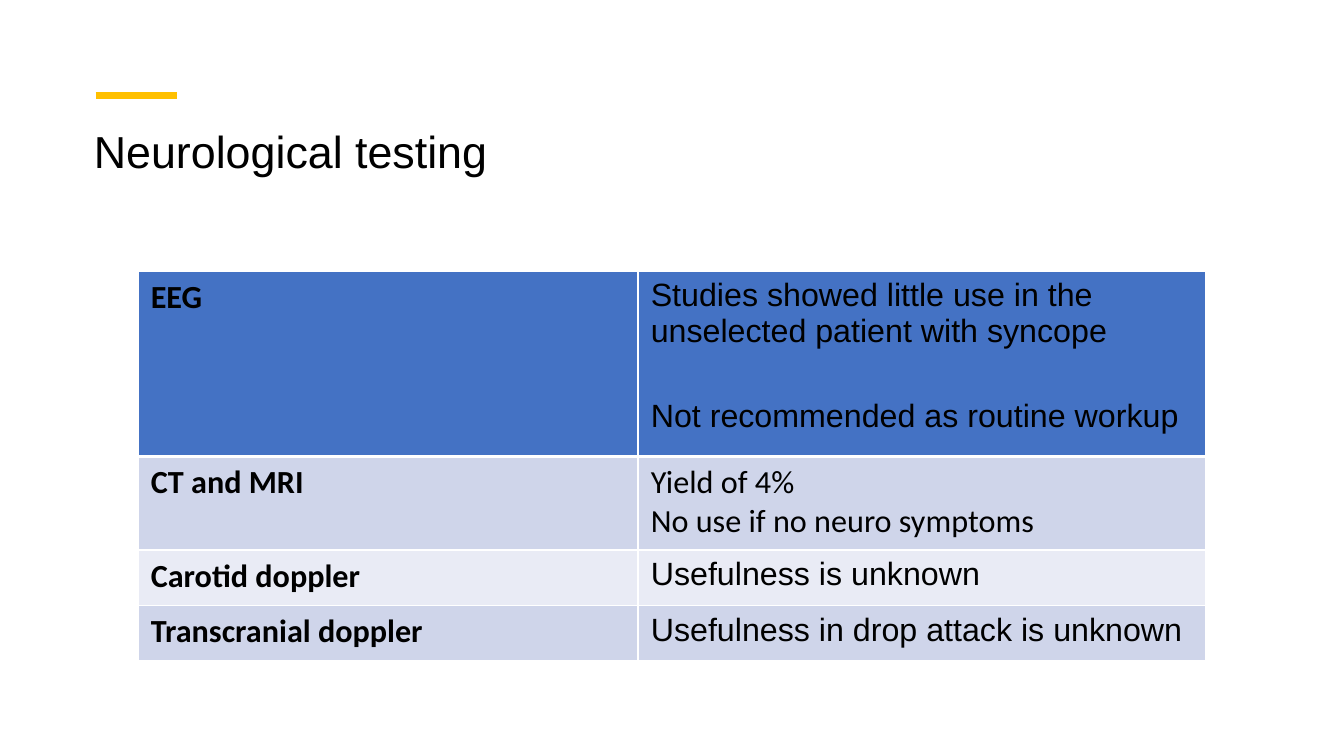
from lxml import etree
from pptx import Presentation
from pptx.dml.color import RGBColor
from pptx.enum.shapes import MSO_CONNECTOR
from pptx.enum.text import MSO_ANCHOR, PP_ALIGN
from pptx.oxml.ns import qn
from pptx.util import Cm, Pt

STRAIGHT = MSO_CONNECTOR.STRAIGHT
TOP = MSO_ANCHOR.TOP
LEFT = PP_ALIGN.LEFT

BLACK = RGBColor(0x00, 0x00, 0x00)
WHITE = RGBColor(0xFF, 0xFF, 0xFF)
GOLD = RGBColor(0xFF, 0xC0, 0x00)
BLUE = RGBColor(0x44, 0x72, 0xC4)
MID = RGBColor(0xCF, 0xD5, 0xEA)
PALE = RGBColor(0xE9, 0xEB, 0xF5)

WIDTHS = (12.6, 14.3)
# Height, fill, test, findings, font of the findings
ROWS = (
    (4.67, BLUE, "EEG",
     ("Studies showed little use in the unselected patient with syncope",
      "Not recommended as routine workup"), "Arial"),
    (2.36, MID, "CT and MRI",
     ("Yield of 4%", "No use if no neuro symptoms"), "Calibri"),
    (1.4, PALE, "Carotid doppler", ("Usefulness is unknown",), "Arial"),
    (1.4, MID, "Transcranial doppler",
     ("Usefulness in drop attack is unknown",), "Arial"),
)


def style(para, face, size, bold=False):
    para.alignment = LEFT
    for run in para.runs:
        font = run.font
        font.name, font.size, font.bold = face, Pt(size), bold
        font.color.rgb = BLACK


def add_title(slide, text):
    title = slide.shapes.title
    title.left, title.top = Cm(2.11), Cm(3.15)
    title.width, title.height = Cm(27.05), Cm(3.07)
    frame = title.text_frame
    frame.text = text
    frame.word_wrap = True
    frame.vertical_anchor = TOP
    para = frame.paragraphs[0]
    para.line_spacing = 0.9
    style(para, "Arial", 32)


def add_accent(slide):
    line = slide.shapes.add_connector(
        STRAIGHT, Cm(2.41), Cm(2.41), Cm(4.45), Cm(2.41))
    line.line.color.rgb = GOLD
    line.line.width = Pt(4.5)
    etree.SubElement(line._element.spPr, qn("a:effectLst"))


def add_edges(cell, base):
    """Draw white borders, the bottom one with the given width in points."""
    props = cell._tc.get_or_add_tcPr()
    for side, width in (("L", 1), ("R", 1), ("T", 1), ("B", base)):
        edge = etree.SubElement(props, qn("a:ln" + side), w=str(Pt(width)))
        fill = etree.SubElement(edge, qn("a:solidFill"))
        etree.SubElement(fill, qn("a:srgbClr"), val=str(WHITE))


def fill_cell(cell, lines, face, bold, color, base):
    add_edges(cell, base)
    cell.fill.solid()
    cell.fill.fore_color.rgb = color
    cell.margin_left = cell.margin_right = Cm(0.32)
    cell.margin_top = cell.margin_bottom = Cm(0.16)
    cell.vertical_anchor = TOP
    cell.text_frame.text = "\n".join(lines)
    for para in cell.text_frame.paragraphs:
        style(para, face, 23, bold)


def add_tests(slide):
    frame = slide.shapes.add_table(
        len(ROWS), len(WIDTHS), Cm(3.48), Cm(6.83),
        Cm(sum(WIDTHS)), Cm(sum(row[0] for row in ROWS)))
    table = frame.table
    table.horz_banding = False
    for col, width in zip(table.columns, WIDTHS):
        col.width = Cm(width)
    for i, (height, color, test, lines, face) in enumerate(ROWS):
        table.rows[i].height = Cm(height)
        base = 3 if i == 0 else 1
        fill_cell(table.cell(i, 0), (test,), "Calibri", True, color, base)
        fill_cell(table.cell(i, 1), lines, face, False, color, base)
    advice = table.cell(0, 1).text_frame.paragraphs[1]
    advice.space_before = Pt(35)


def main():
    deck = Presentation()
    deck.slide_width, deck.slide_height = Cm(33.87), Cm(19.05)
    slide = deck.slides.add_slide(deck.slide_layouts[5])
    add_title(slide, "Neurological testing")
    add_accent(slide)
    add_tests(slide)
    deck.save("out.pptx")


if __name__ == "__main__":
    main()
